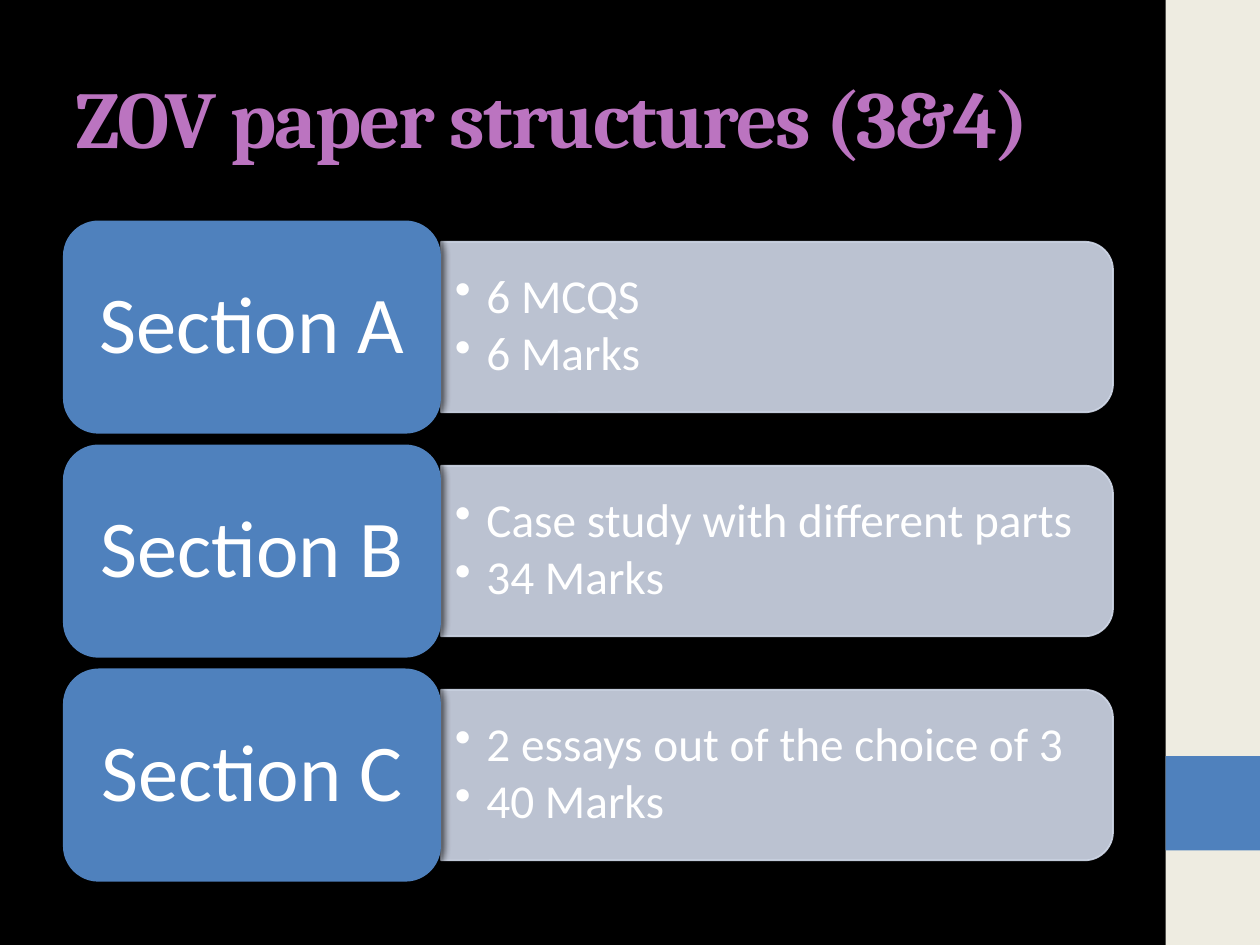
import pptx
import pptx.dml.color
import pptx.enum.shapes
import pptx.enum.text
import pptx.oxml
import pptx.oxml.ns
import pptx.util

Pt = pptx.util.Pt
SHAPES = pptx.enum.shapes.MSO_SHAPE
ALIGN = pptx.enum.text.PP_ALIGN
qn = pptx.oxml.ns.qn

# Content
TITLE = "ZOV paper structures (3&4)"
SECTIONS = [
    ("Section A", ["6 MCQS", "6 Marks"]),
    ("Section B", ["Case study with different parts", "34 Marks"]),
    ("Section C", ["2 essays out of the choice of 3", "40 Marks"]),
]

# Format
COLORS = {
    "background": "000000", "strip": "EEECE1", "accent": "4F81BD",
    "band": "D0D8E8", "title": "BB74C0", "text": "FFFFFF",
}
TITLE_FONT = {"name": "Cambria", "size": Pt(46), "bold": True}
LABEL_FONT = {"name": "Calibri", "size": Pt(46)}
DETAIL_FONT = {"name": "Calibri", "size": Pt(27)}
LABEL_PARAGRAPH = {"alignment": ALIGN.CENTER, "line_spacing": 0.9}
DETAIL_PARAGRAPH = {"alignment": ALIGN.LEFT, "line_spacing": 0.9, "space_after": Pt(3.5)}

# Layout, in points
SLIDE_WIDTH, SLIDE_HEIGHT = 720, 540
STRIP_LEFT, STRIP_WIDTH = 666, 54
CARD_LEFT, CARD_TOP, CARD_WIDTH, CARD_HEIGHT = 36, 126, 216, 121.8
ROW_PITCH = 128
BAND_WIDTH, BAND_HEIGHT = 384, 97.5
DETAIL_WIDTH, DETAIL_HEIGHT = 379.4, 88
BULLET_INDENT = 18


def rgb(name):
    return pptx.dml.color.RGBColor.from_string(COLORS[name])


def apply(target, values):
    for name, value in values.items():
        setattr(target, name, value)


def add_element(parent, tag, **attributes):
    element = parent.makeelement(qn(tag), attributes)
    parent.append(element)
    return element


def add_block(slide, kind, left, top, width, height, color):
    shape = slide.shapes.add_shape(kind, Pt(left), Pt(top), Pt(width), Pt(height))
    shape.shadow.inherit = False
    shape.fill.solid()
    shape.fill.fore_color.rgb = rgb(color)
    shape.line.fill.background()
    return shape


def write(shape, lines, font, color, paragraph_format, margins):
    frame = shape.text_frame
    frame.word_wrap = True
    frame.vertical_anchor = pptx.enum.text.MSO_ANCHOR.MIDDLE
    for side, margin in zip(("left", "top", "right", "bottom"), margins):
        setattr(frame, f"margin_{side}", Pt(margin))
    frame.text = "\n".join(lines)
    for paragraph in frame.paragraphs:
        apply(paragraph, paragraph_format)
        apply(paragraph.runs[0].font, font)
        paragraph.runs[0].font.color.rgb = rgb(color)
    return frame.paragraphs


def add_band(slide, center_y):
    # A quarter turn puts the two rounded corners on the right
    left = CARD_LEFT + CARD_WIDTH + (BAND_WIDTH - BAND_HEIGHT) / 2
    band = add_block(slide, SHAPES.ROUND_2_SAME_RECTANGLE, left,
                     center_y - BAND_WIDTH / 2, BAND_HEIGHT, BAND_WIDTH, "band")
    band.rotation = 90
    band.line.color.rgb = rgb("band")
    band.line.width = Pt(1)
    for color in band._element.spPr.iter(qn("a:srgbClr")):
        add_element(color, "a:alpha", val="90000")


def add_details(slide, center_y, lines):
    box = slide.shapes.add_textbox(
        Pt(CARD_LEFT + CARD_WIDTH), Pt(center_y - DETAIL_HEIGHT / 2),
        Pt(DETAIL_WIDTH), Pt(DETAIL_HEIGHT))
    for paragraph in write(box, lines, DETAIL_FONT, "text", DETAIL_PARAGRAPH, (8, 4, 8, 4)):
        properties = paragraph._p.get_or_add_pPr()
        properties.set("marL", str(Pt(BULLET_INDENT)))
        properties.set("indent", str(-Pt(BULLET_INDENT)))
        add_element(properties, "a:buChar", char="•")


def add_card(slide, top, label):
    card = add_block(slide, SHAPES.ROUNDED_RECTANGLE, CARD_LEFT, top,
                     CARD_WIDTH, CARD_HEIGHT, "accent")
    effects = card._element.spPr.find(qn("a:effectLst"))
    shadow = add_element(effects, "a:outerShdw", blurRad=str(Pt(4)), dist=str(Pt(2)),
                         dir="0", rotWithShape="0")
    add_element(add_element(shadow, "a:srgbClr", val=COLORS["background"]),
                "a:alpha", val="60000")
    write(card, [label], LABEL_FONT, "text", LABEL_PARAGRAPH, (14, 7, 14, 7))


def main():
    presentation = pptx.Presentation()
    presentation.slide_width = Pt(SLIDE_WIDTH)
    presentation.slide_height = Pt(SLIDE_HEIGHT)
    slide = presentation.slides.add_slide(presentation.slide_layouts[6])
    slide.background.fill.solid()
    slide.background.fill.fore_color.rgb = rgb("background")

    # Side strip with its accent square
    add_block(slide, SHAPES.RECTANGLE, STRIP_LEFT, 0, STRIP_WIDTH, SLIDE_HEIGHT, "strip")
    add_block(slide, SHAPES.RECTANGLE, STRIP_LEFT, 432, STRIP_WIDTH, STRIP_WIDTH, "accent")

    # Title
    title = slide.shapes.add_textbox(Pt(36), Pt(21.6), Pt(600), Pt(90))
    paragraph = write(title, [TITLE], TITLE_FONT, "title", {}, (7.2, 3.6, 7.2, 3.6))[0]
    paragraph.runs[0].font._element.set("spc", "-100")

    # One row per section
    for row, (label, details) in enumerate(SECTIONS):
        top = CARD_TOP + row * ROW_PITCH
        center_y = top + CARD_HEIGHT / 2
        add_band(slide, center_y)
        add_details(slide, center_y, details)
        add_card(slide, top, label)

    presentation.save("out.pptx")


if __name__ == "__main__":
    main()
